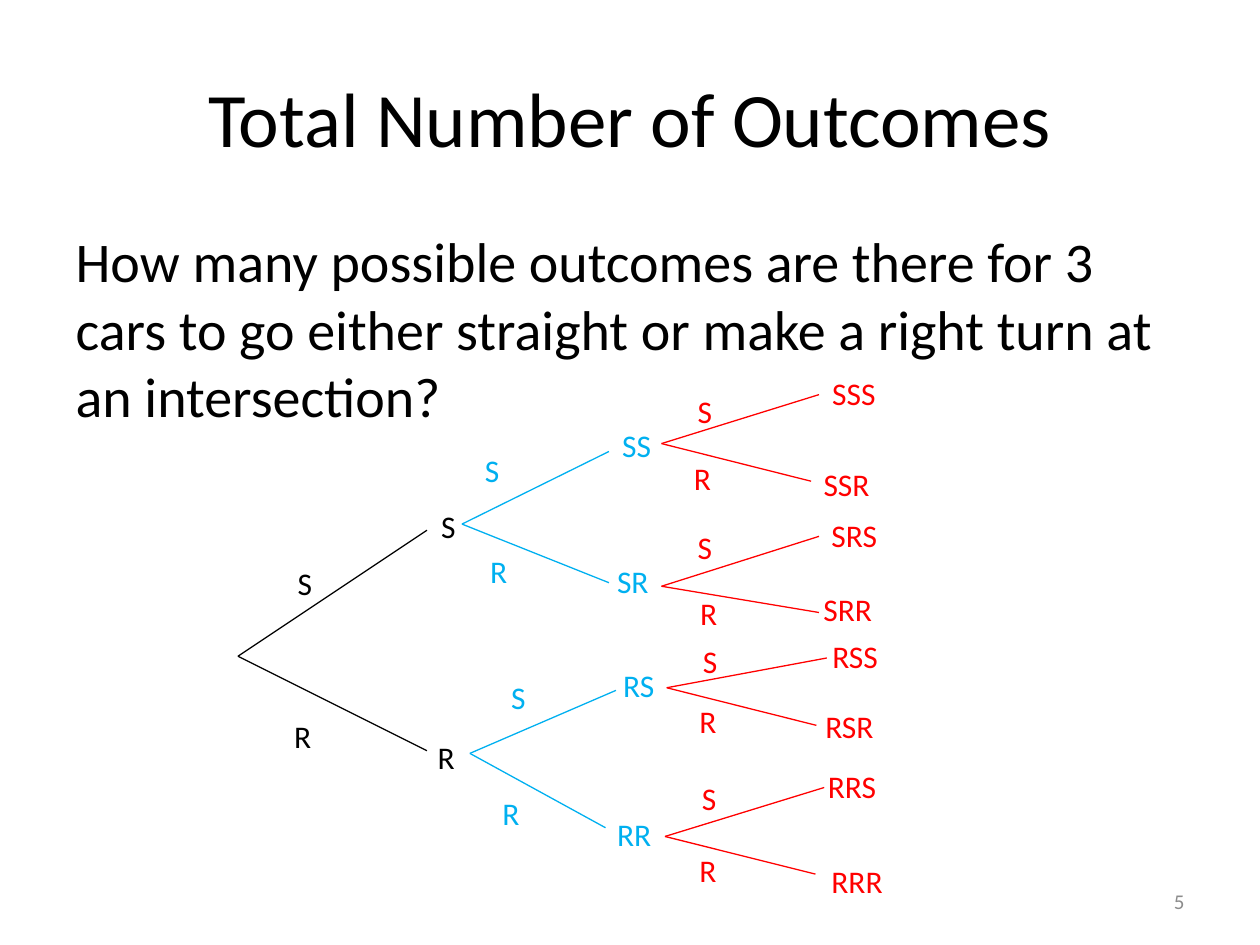
from lxml import etree
from pptx import Presentation
from pptx.dml.color import RGBColor
from pptx.enum.shapes import MSO_CONNECTOR
from pptx.enum.text import MSO_ANCHOR, MSO_AUTO_SIZE, PP_ALIGN
from pptx.oxml.ns import qn
from pptx.util import Pt

STRAIGHT = MSO_CONNECTOR.STRAIGHT
MIDDLE, TOP = MSO_ANCHOR.MIDDLE, MSO_ANCHOR.TOP
LEFT, CENTER, RIGHT = PP_ALIGN.LEFT, PP_ALIGN.CENTER, PP_ALIGN.RIGHT
FIT_SHAPE = MSO_AUTO_SIZE.SHAPE_TO_FIT_TEXT

COLORS = {"black": "000000", "blue": "00B0F0", "red": "FF0000", "gray": "8C8C8C"}
LEVEL_COLORS = ["black", "blue", "red"]
LETTER_WIDTHS = {"S": 8.3, "R": 9.8}
LABEL_INSETS = 14.4
LABEL_HEIGHT = 28.8

# Outcome so far: fork point, then for each turn the line end,
# the corner of the branch label and the corner of the outcome label.
FORKS = {
    "": ((136, 375), {"S": ((244, 303), (163, 319), (245, 286)),
                      "R": ((244, 429), (161, 406), (243, 418))}),
    "S": ((264, 299.5), {"S": ((348, 258), (270, 254), (348.5, 240)),
                         "R": ((348, 333), (273, 312), (345.5, 317.5))}),
    "R": ((268.5, 430.5), {"S": ((352, 394.5), (285, 384), (349, 377)),
                           "R": ((346, 473), (280, 450), (345.5, 462))}),
    "SS": ((378, 253.5), {"S": ((468, 225.5), (391.5, 220.5), (468.5, 210)),
                          "R": ((463.5, 275), (389.5, 258.5), (463.5, 262))}),
    "SR": ((378, 335), {"S": ((468, 306.5), (391.5, 298), (468, 291.5)),
                        "R": ((468, 350), (393, 336), (463.5, 333.5))}),
    "RS": ((381, 393), {"S": ((472.5, 376), (394.5, 363.5), (468.5, 360.5)),
                        "R": ((466.5, 414.5), (392.5, 397.5), (464.5, 400.5))}),
    "RR": ((380, 478), {"S": ((471, 450), (394, 441.5), (466, 435)),
                        "R": ((466, 499.5), (392.5, 483), (468, 489))}),
}


def set_attributes(target, values):
    for name, value in values.items():
        setattr(target, name, value)


def write_text(shape, text, size, color, alignment=LEFT, **frame_format):
    frame = shape.text_frame
    set_attributes(frame, frame_format)
    paragraph = frame.paragraphs[0]
    paragraph.alignment = alignment
    run = paragraph.add_run()
    run.text = text
    set_attributes(run.font, {"name": "Calibri", "size": Pt(size)})
    run.font.color.rgb = RGBColor.from_string(COLORS[color])


def place(shape, left, top, width, height):
    set_attributes(shape, {"left": Pt(left), "top": Pt(top),
                           "width": Pt(width), "height": Pt(height)})


def remove_bullet(paragraph):
    properties = paragraph._p.get_or_add_pPr()
    properties.set("marL", "0")
    properties.set("indent", "0")
    etree.SubElement(properties, qn("a:buNone"))


def add_label(slide, text, corner, color):
    width = LABEL_INSETS + sum(LETTER_WIDTHS[letter] for letter in text)
    box = slide.shapes.add_textbox(Pt(corner[0]), Pt(corner[1]), Pt(width), Pt(LABEL_HEIGHT))
    write_text(box, text, 18, color, word_wrap=False, auto_size=FIT_SHAPE)


def add_branch_line(slide, start, end, color):
    line = slide.shapes.add_connector(STRAIGHT, *map(Pt, start + end))
    line.line.color.rgb = RGBColor.from_string(COLORS[color])
    line.line.width = Pt(0.75)
    etree.SubElement(line._element.spPr, qn("a:effectLst"))


def add_tree(slide):
    for outcome, (start, branches) in FORKS.items():
        color = LEVEL_COLORS[len(outcome)]
        for turn, (end, turn_corner, outcome_corner) in branches.items():
            add_branch_line(slide, start, end, color)
            add_label(slide, turn, turn_corner, color)
            add_label(slide, outcome + turn, outcome_corner, color)


def add_slide_number(slide, number):
    box = slide.shapes.add_textbox(Pt(516), Pt(500.5), Pt(168), Pt(28.75))
    write_text(box, number, 12, "gray", RIGHT, word_wrap=True, vertical_anchor=MIDDLE)


def main():
    presentation = Presentation()
    set_attributes(presentation, {"slide_width": Pt(720), "slide_height": Pt(540)})
    slide = presentation.slides.add_slide(presentation.slide_layouts[1])

    title, body = slide.placeholders
    place(title, 36, 21.6, 648, 90)
    write_text(title, "Total Number of Outcomes", 44, "black", CENTER, vertical_anchor=MIDDLE)
    place(body, 36, 126, 648, 356.4)
    write_text(body, "How many possible outcomes are there for 3 cars to go either "
               "straight or make a right turn at an intersection?",
               32, "black", vertical_anchor=TOP)
    remove_bullet(body.text_frame.paragraphs[0])

    add_slide_number(slide, "5")
    add_tree(slide)
    presentation.save("out.pptx")


if __name__ == "__main__":
    main()
